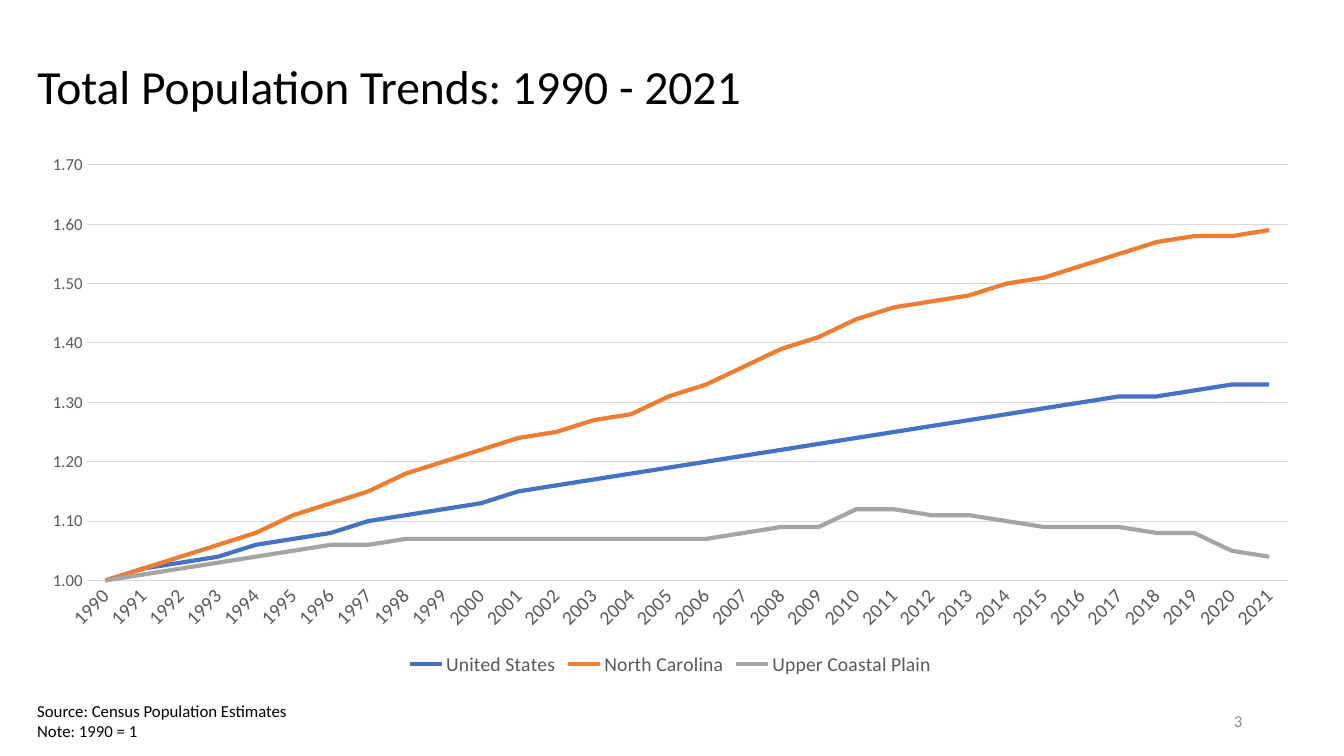
from pptx import Presentation
from pptx.chart.data import CategoryChartData
from pptx.dml.color import RGBColor
from pptx.enum.chart import XL_CHART_TYPE, XL_LEGEND_POSITION, XL_TICK_MARK
from pptx.enum.text import MSO_ANCHOR, MSO_AUTO_SIZE, PP_ALIGN
from pptx.util import Inches, Pt

FONT = "Calibri"
BLACK = RGBColor(0x00, 0x00, 0x00)
LABEL_GRAY = RGBColor(0x59, 0x59, 0x59)
NUMBER_GRAY = RGBColor(0x8C, 0x8C, 0x8C)
GRID_GRAY = RGBColor(0xD9, 0xD9, 0xD9)
BLUE = RGBColor(0x44, 0x72, 0xC4)
ORANGE = RGBColor(0xED, 0x7D, 0x31)
SILVER = RGBColor(0xA5, 0xA5, 0xA5)

LEFT, WIDTH = 0.27, 12.76
YEARS = range(1990, 2022)
POPULATION_INDEX = [
    ("United States", BLUE, [
        1, 1.02, 1.03, 1.04, 1.06, 1.07, 1.08, 1.1, 1.11, 1.12, 1.13,
        1.15, 1.16, 1.17, 1.18, 1.19, 1.2, 1.21, 1.22, 1.23, 1.24, 1.25,
        1.26, 1.27, 1.28, 1.29, 1.3, 1.31, 1.31, 1.32, 1.33, 1.33]),
    ("North Carolina", ORANGE, [
        1, 1.02, 1.04, 1.06, 1.08, 1.11, 1.13, 1.15, 1.18, 1.2, 1.22,
        1.24, 1.25, 1.27, 1.28, 1.31, 1.33, 1.36, 1.39, 1.41, 1.44, 1.46,
        1.47, 1.48, 1.5, 1.51, 1.53, 1.55, 1.57, 1.58, 1.58, 1.59]),
    ("Upper Coastal Plain", SILVER, [
        1, 1.01, 1.02, 1.03, 1.04, 1.05, 1.06, 1.06, 1.07, 1.07, 1.07,
        1.07, 1.07, 1.07, 1.07, 1.07, 1.07, 1.08, 1.09, 1.09, 1.12, 1.12,
        1.11, 1.11, 1.1, 1.09, 1.09, 1.09, 1.08, 1.08, 1.05, 1.04]),
]


def style_font(font, size, color):
    font.name = FONT
    font.size = Pt(size)
    font.color.rgb = color


def style_line(line, color, width):
    line.color.rgb = color
    line.width = Pt(width)


def write(frame, text, size=12, color=BLACK, align=PP_ALIGN.LEFT,
          anchor=MSO_ANCHOR.TOP, wrap=True, fit=MSO_AUTO_SIZE.NONE,
          spacing=1.0):
    frame.auto_size = fit
    frame.word_wrap = wrap
    frame.vertical_anchor = anchor
    frame.text = text
    for paragraph in frame.paragraphs:
        paragraph.alignment = align
        paragraph.line_spacing = spacing
        for run in paragraph.runs:
            style_font(run.font, size, color)


def add_title(slide, text):
    title = slide.shapes.title
    title.left, title.top = Inches(LEFT), Inches(0.34)
    title.width, title.height = Inches(WIDTH), Inches(1.09)
    write(title.text_frame, text, size=34, anchor=MSO_ANCHOR.MIDDLE,
          spacing=0.9)


def add_text(slide, text, left, top, width, height, **style):
    box = slide.shapes.add_textbox(
        Inches(left), Inches(top), Inches(width), Inches(height))
    write(box.text_frame, text, **style)


def style_axis(axis, size):
    axis.major_tick_mark = XL_TICK_MARK.NONE
    axis.minor_tick_mark = XL_TICK_MARK.NONE
    style_font(axis.tick_labels.font, size, LABEL_GRAY)


def add_trend_chart(slide):
    trends = CategoryChartData(number_format="0.00")
    trends.categories = [str(year) for year in YEARS]
    for region, _, values in POPULATION_INDEX:
        trends.add_series(region, values)
    chart = slide.shapes.add_chart(
        XL_CHART_TYPE.LINE, Inches(LEFT), Inches(1.43), Inches(WIDTH),
        Inches(5.32), trends).chart
    chart.has_title = False
    style_font(chart.font, 10, BLACK)

    years = chart.category_axis
    style_axis(years, 14)
    style_line(years.format.line, GRID_GRAY, 0.75)
    years.tick_labels.font._element.getparent().getparent().getparent() \
        .find("{*}bodyPr").set("rot", "-2700000")

    index = chart.value_axis
    style_axis(index, 12)
    index.minimum_scale, index.maximum_scale = 1, 1.7
    index.major_unit = 0.1
    index.tick_labels.number_format = "0.00"
    index.tick_labels.number_format_is_linked = False
    index.format.line.fill.background()
    style_line(index.major_gridlines.format.line, GRID_GRAY, 0.75)

    chart.has_legend = True
    chart.legend.position = XL_LEGEND_POSITION.BOTTOM
    chart.legend.include_in_layout = False
    style_font(chart.legend.font, 14, LABEL_GRAY)

    chart.plots[0].vary_by_categories = False
    for series, (_, color, _) in zip(chart.plots[0].series, POPULATION_INDEX):
        series.smooth = False
        style_line(series.format.line, color, 3)


def main():
    deck = Presentation()
    deck.slide_width, deck.slide_height = Inches(13.33), Inches(7.5)
    slide = deck.slides.add_slide(deck.slide_layouts[5])
    add_title(slide, "Total Population Trends: 1990 - 2021")
    add_trend_chart(slide)
    add_text(slide, "3", 9.42, 6.95, 3, 0.4, color=NUMBER_GRAY,
             align=PP_ALIGN.RIGHT, anchor=MSO_ANCHOR.MIDDLE)
    add_text(slide, "Source: Census Population Estimates\nNote: 1990 = 1",
             LEFT, 6.9, 2.71, 0.5, wrap=False,
             fit=MSO_AUTO_SIZE.SHAPE_TO_FIT_TEXT)
    deck.save("out.pptx")


if __name__ == "__main__":
    main()
